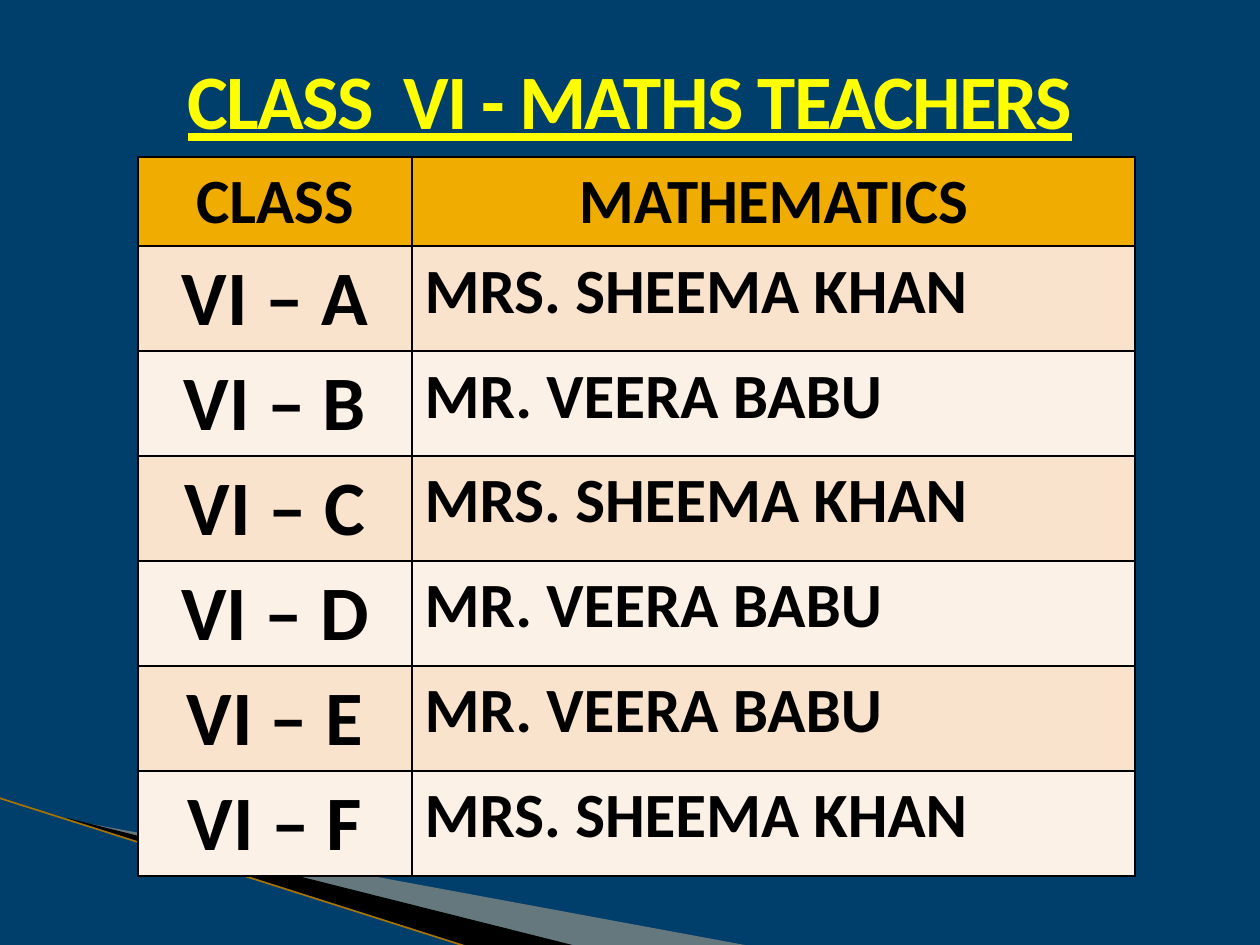
import pptx
import pptx.dml.color
import pptx.enum.shapes
import pptx.enum.text
import pptx.oxml.ns
import pptx.util
from lxml import etree

SCALE = 914400 / 126
CENTER = pptx.enum.text.PP_ALIGN.CENTER
LEFT = pptx.enum.text.PP_ALIGN.LEFT


def px(n):
    return pptx.util.Emu(round(n * SCALE))


def color(value):
    return pptx.dml.color.RGBColor.from_string(value)


def add_xml(parent, tag, **attrs):
    return etree.SubElement(parent, pptx.oxml.ns.qn(tag), **attrs)


class Deck:
    """Holds the style and the current slide, and draws each kind of element."""

    font = "Calibri"
    ink = "000000"
    header_fill = "F0AD00"
    bands = ("F9E3CC", "FCF1E7")

    def __init__(self, width, height, background):
        self.prs = pptx.Presentation()
        self.prs.slide_width, self.prs.slide_height = px(width), px(height)
        self.s = self.prs.slides.add_slide(self.prs.slide_layouts[6])
        self.s.background.fill.solid()
        self.s.background.fill.fore_color.rgb = color(background)

    def format(self, p, size, ink, align):
        p.alignment = align
        for r in p.runs:
            r.font.name, r.font.size, r.font.bold = self.font, pptx.util.Pt(size), True
            r.font.color.rgb = color(ink)

    def polygon(self, points, frame, fill, alpha=None):
        builder = self.s.shapes.build_freeform(*points[0], scale=SCALE)
        builder.add_line_segments(points[1:], close=True)
        sp = builder.convert_to_shape()
        self.reframe(sp, points, *frame)
        sp.shadow.inherit = False
        sp.line.fill.background()
        sp.fill.solid()
        sp.fill.fore_color.rgb = color(fill)
        if alpha is not None:
            rgb = sp._element.spPr.find(".//" + pptx.oxml.ns.qn("a:srgbClr"))
            add_xml(rgb, "a:alpha", val=str(alpha * 1000))

    def reframe(self, sp, points, x, y, w, h):
        sp.left, sp.top, sp.width, sp.height = px(x), px(y), px(w), px(h)
        outline = sp._element.spPr.find(".//" + pptx.oxml.ns.qn("a:path"))
        outline.set("w", str(w))
        outline.set("h", str(h))
        for pt, (left, top) in zip(outline.iter(pptx.oxml.ns.qn("a:pt")), points):
            pt.set("x", str(left - x))
            pt.set("y", str(top - y))

    def line(self, x1, y1, x2, y2, ink, width):
        straight = pptx.enum.shapes.MSO_CONNECTOR.STRAIGHT
        sp = self.s.shapes.add_connector(straight, px(x1), px(y1), px(x2), px(y2))
        sp.line.color.rgb = color(ink)
        sp.line.width = pptx.util.Pt(width)
        add_xml(sp._element.spPr, "a:effectLst")

    def title(self, text, x, y, w, h, size, ink):
        tf = self.s.shapes.add_textbox(px(x), px(y), px(w), px(h)).text_frame
        tf.word_wrap = True
        p = tf.paragraphs[0]
        p.text = text
        p.line_spacing = 1.5
        self.format(p, size, ink, CENTER)
        for r in p.runs:
            r.font.underline = True
            r.font._element.set("spc", "-100")

    def cell(self, cell, text, size, align, fill, top=6):
        cell.margin_top, cell.margin_bottom = px(top), px(5)
        cell.text = text
        self.format(cell.text_frame.paragraphs[0], size, self.ink, align)
        tc_pr = cell._tc.get_or_add_tcPr()
        for side in ("a:lnL", "a:lnR", "a:lnT", "a:lnB"):
            ln = add_xml(tc_pr, side, w="12700")
            add_xml(add_xml(ln, "a:solidFill"), "a:srgbClr", val=self.ink)
        cell.fill.solid()
        cell.fill.fore_color.rgb = color(fill)

    def table(self, header, rows, x, y, widths, header_height, row_height):
        height = header_height + row_height * len(rows)
        table = self.s.shapes.add_table(
            len(rows) + 1, len(header), px(x), px(y), px(sum(widths)), px(height)
        ).table
        table.first_row = table.horz_banding = False
        for column, width in zip(table.columns, widths):
            column.width = px(width)
        for i, row in enumerate(table.rows):
            row.height = px(row_height if i else header_height)
        for j, text in enumerate(header):
            self.cell(table.cell(0, j), text, 36, CENTER, self.header_fill)
        for i, (section, teacher) in enumerate(rows):
            fill = self.bands[i % 2]
            self.cell(table.cell(i + 1, 0), section, 44, CENTER, fill)
            self.cell(table.cell(i + 1, 1), teacher, 36, LEFT, fill, top=7)


def main():
    khan, babu = "MRS. SHEEMA KHAN", "MR. VEERA BABU"
    teachers = [khan, babu, khan, babu, babu, khan]
    rows = [(f"VI – {letter}", name) for letter, name in zip("ABCDEF", teachers)]

    deck = Deck(1260, 945, "003E6C")
    upper = [(69, 820), (750, 946), (575, 946), (69, 819)]
    lower = [(67, 818), (576, 946), (473, 948), (68, 819)]
    deck.polygon(upper, (98, 689, 524, 199), "FCCF9B", alpha=40)
    deck.polygon(lower, (-8, 798, 524, 116), "000000")
    deck.line(-1, 798, 471, 948, "A87400", 0.95)
    deck.title("CLASS  VI - MATHS TEACHERS", 0, 0, 1260, 152, 44, "FFFF00")
    deck.table(("CLASS", "MATHEMATICS"), rows, 138, 157, (274, 723), 89, 105)
    deck.prs.save("out.pptx")


if __name__ == "__main__":
    main()
